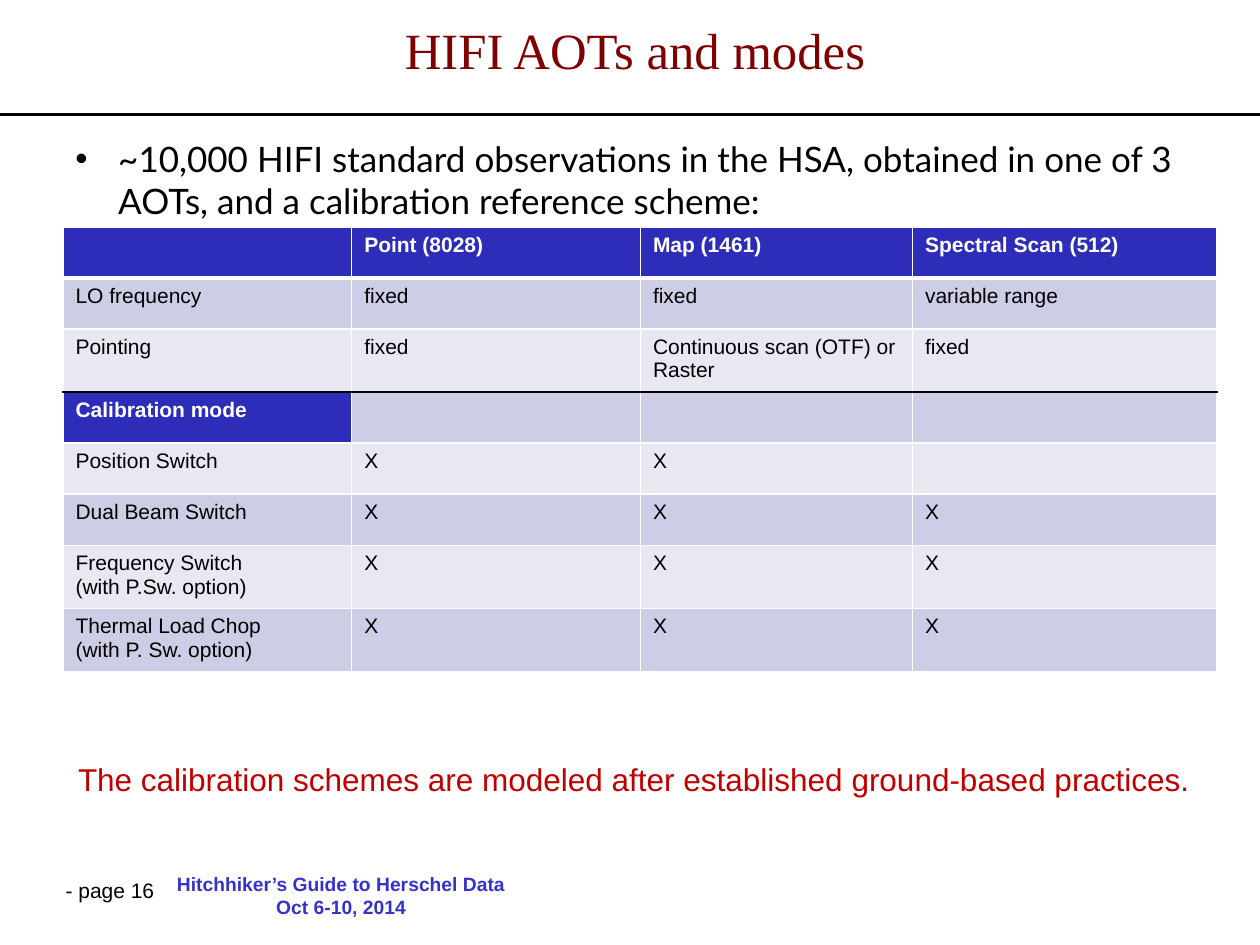
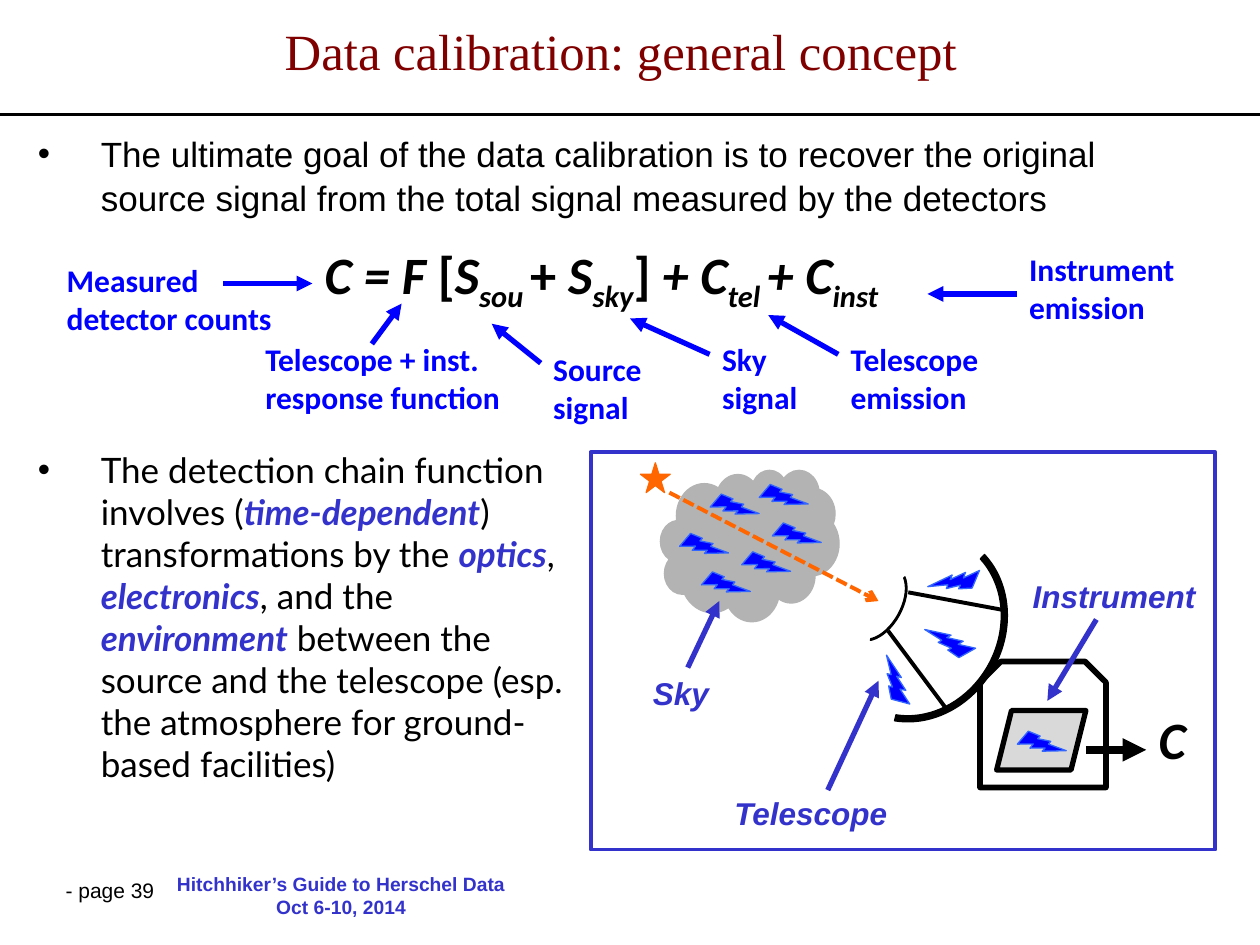
import pptx
import pptx.dml.color
import pptx.enum.dml
import pptx.enum.shapes
import pptx.enum.text
import pptx.oxml.ns
import pptx.util
from lxml import etree

Pt = pptx.util.Pt
SHAPE = pptx.enum.shapes.MSO_SHAPE
ALIGN = pptx.enum.text.PP_ALIGN
qn = pptx.oxml.ns.qn

COLORS = {
    "black": "000000", "white": "FFFFFF", "title": "800000", "accent": "3333CC",
    "header": "2D2DB9", "band_dark": "CDCDE6", "band_light": "E8E8F3",
    "note": "C00000", "label": "0000FF", "bolt_edge": "3366FF",
    "source": "FF6600", "cloud": "B3B3B3", "detector": "D9D9D9",
}
FOOTER = ["Hitchhiker’s Guide to Herschel Data", "Oct 6-10, 2014"]

# Observing modes
MODES_INTRO = ("~10,000 HIFI standard observations in the HSA, obtained in one of 3 AOTs, "
               "and a calibration reference scheme:")
MODES_NOTE = "The calibration schemes are modeled after established ground-based practices."
MODES = [
    ["", "Point (8028)", "Map (1461)", "Spectral Scan (512)"],
    ["LO frequency", "fixed", "fixed", "variable range"],
    ["Pointing", "fixed", "Continuous scan (OTF) or Raster", "fixed"],
    ["Calibration mode", "", "", ""],
    ["Position Switch", "X", "X", ""],
    ["Dual Beam Switch", "X", "X", "X"],
    ["Frequency Switch\n(with P.Sw. option)", "X", "X", "X"],
    ["Thermal Load Chop\n(with P. Sw. option)", "X", "X", "X"],
]
COLUMN_WIDTHS = [165, 165, 155.5, 174]
ROW_HEIGHT = 29.2
CALIBRATION_ROW = 3

# Calibration concept
GOAL = ("The ultimate goal of the data calibration is to recover the original source signal "
        "from the total signal measured by the detectors")
KEYWORD = {"color": "accent", "bold": True, "italic": True}
CHAIN = [
    ("The detection chain function involves (", {}), ("time-dependent", KEYWORD),
    (") transformations by the ", {}), ("optics", KEYWORD), (", ", {}),
    ("electronics", KEYWORD), (", and the ", {}), ("environment", KEYWORD),
    (" between the source and the telescope (esp. the atmosphere for ground-based facilities)", {}),
]
UPRIGHT = {"italic": False}
SUBSCRIPT = {"baseline": -25}
FORMULA = [
    ("C = F ", {}), ("[", UPRIGHT), ("S", {}), ("sou ", SUBSCRIPT), ("+ ", UPRIGHT),
    ("S", {}), ("sky", SUBSCRIPT), ("]", UPRIGHT), (" + C", {}), ("tel ", SUBSCRIPT),
    ("+ C", {}), ("inst", SUBSCRIPT),
]
# text, box, arrow start, arrow end
TERMS = [
    ("Measured detector counts", (31, 145.5, 140, 51), (127.5, 162), (178.5, 162)),
    ("Telescope + inst. response function", (144.5, 191, 153.5, 51), (212.5, 196.5), (229.5, 173.5)),
    ("Source signal", (309, 196.5, 79, 51), (309, 207.5), (281, 185)),
    ("Sky signal", (405.5, 191, 79, 51), (405.5, 202.5), (360, 182)),
    ("Telescope emission", (479, 191, 107, 51), (479, 202.5), (439, 180)),
    ("Instrument emission", (581, 139.5, 119, 51), (581, 168), (530, 168)),
]
PARTS = [
    ("Sky", (366, 381.5, 55, 29.5), (393, 381.5), (411, 343.5)),
    ("Telescope", (412.5, 450, 129, 29), (473, 451.5), (502, 389)),
    ("Instrument", (583, 326, 129, 29), (626.5, 354), (598.5, 400.5)),
]
SKY_BOLTS = [(390, 302.5), (435.5, 274.5), (443, 296.5), (425.5, 313), (407.5, 280), (402.5, 324.5)]
DETECTOR_BOLT = (583, 415.5)
DISH_BOLTS = [(533, 322, 131.4), (499, 380, 213.4), (530, 357, 169)]  # left, top, rotation
MIRRORS = [(467.5, 307.5, 113, 100), (479.5, 332, 45.5, 26.5)]
STRUTS = [((519, 338.5), (575.5, 349)), ((507.5, 360.5), (541.5, 406))]


def rgb(name):
    return pptx.dml.color.RGBColor.from_string(COLORS[name])


def points(values):
    return [Pt(value) for value in values]


def set_font(font, size, name, color, bold=False, italic=False):
    font.size, font.name = Pt(size), name
    font.color.rgb = rgb(color)
    font.bold, font.italic = bold, italic


def add_bullet(paragraph, indent):
    properties = paragraph._p.get_or_add_pPr()
    properties.set("marL", str(Pt(indent)))
    properties.set("indent", str(-Pt(indent)))
    etree.SubElement(properties, qn("a:buFont")).set("typeface", "Arial")
    etree.SubElement(properties, qn("a:buChar")).set("char", "•")


def add_text(slide, box, paragraphs, size, font, color="black", bold=False, italic=False,
             align=ALIGN.LEFT, bullet_indent=0):
    """Add a text box; each paragraph is a string or a list of (text, changes) runs."""
    frame = slide.shapes.add_textbox(*points(box)).text_frame
    frame.word_wrap = True
    for index, content in enumerate(paragraphs):
        paragraph = frame.add_paragraph() if index else frame.paragraphs[0]
        paragraph.alignment = align
        if bullet_indent:
            add_bullet(paragraph, bullet_indent)
        set_font(paragraph.font, size, font, color, bold, italic)
        for text, changes in [(content, {})] if isinstance(content, str) else content:
            run = paragraph.add_run()
            run.text = text
            if "color" in changes:
                run.font.color.rgb = rgb(changes["color"])
            if "bold" in changes:
                run.font.bold = changes["bold"]
            if "italic" in changes:
                run.font.italic = changes["italic"]
            if "baseline" in changes:
                run.font._element.set("baseline", str(changes["baseline"] * 1000))
    return frame


def add_line(slide, start, end, color, width, head=None, dash=None):
    connector = slide.shapes.add_connector(
        pptx.enum.shapes.MSO_CONNECTOR.STRAIGHT, *points(start + end))
    connector.line.color.rgb = rgb(color)
    connector.line.width = Pt(width)
    if dash:
        connector.line.dash_style = dash
    if head:
        etree.SubElement(connector.line._get_or_add_ln(), qn("a:tailEnd")).set("type", head)
    etree.SubElement(connector._element.spPr, qn("a:effectLst"))


def add_shape(slide, kind, box, fill, line, width=0.75, rotation=0, adjustments=()):
    shape = slide.shapes.add_shape(kind, *points(box))
    shape.shadow.inherit = False
    shape.rotation = rotation
    for index, value in enumerate(adjustments):
        shape.adjustments[index] = value
    if fill:
        shape.fill.solid()
        shape.fill.fore_color.rgb = rgb(fill)
    else:
        shape.fill.background()
    shape.line.color.rgb = rgb(line)
    shape.line.width = Pt(width)


def add_slide(presentation, title, title_box, page):
    """Add a title-only slide with the shared rule and footer."""
    slide = presentation.slides.add_slide(presentation.slide_layouts[5])
    placeholder = slide.shapes.title
    placeholder.left, placeholder.top, placeholder.width, placeholder.height = points(title_box)
    placeholder.text_frame.text = title
    set_font(placeholder.text_frame.paragraphs[0].font, 29, "Times New Roman", "title")
    add_line(slide, (0, 65.5), (720, 65.5), "black", 1.5)
    add_text(slide, (27, 498, 72, 25), [f"- page {page}"], 12, "Arial").margin_left = Pt(10.5)
    add_text(slide, (91, 495, 208, 36), FOOTER, 11, "Arial", "accent", bold=True, align=ALIGN.CENTER)
    return slide


def set_borders(cell, top, bottom):
    """Draw white sides, and top and bottom edges given as (color, width)."""
    side = ("white", 1)
    for tag, (color, width) in (("lnL", side), ("lnR", side), ("lnT", top), ("lnB", bottom)):
        line = etree.SubElement(cell._tc.get_or_add_tcPr(), qn(f"a:{tag}"), w=str(Pt(width)))
        fill = etree.SubElement(line, qn("a:solidFill"))
        etree.SubElement(fill, qn("a:srgbClr")).set("val", COLORS[color])


def add_modes_table(slide):
    box = (36, 129.6, sum(COLUMN_WIDTHS), ROW_HEIGHT * len(MODES))
    table = slide.shapes.add_table(len(MODES), len(COLUMN_WIDTHS), *points(box)).table
    for column, width in zip(table.columns, COLUMN_WIDTHS):
        column.width = Pt(width)
    edges = [("white", 1)] * (len(MODES) + 1)
    edges[1] = ("white", 3)
    edges[CALIBRATION_ROW] = ("black", 1)
    for row, texts in enumerate(MODES):
        table.rows[row].height = Pt(ROW_HEIGHT)
        for column, text in enumerate(texts):
            cell = table.cell(row, column)
            heading = row == 0 or (row, column) == (CALIBRATION_ROW, 0)
            cell.text = text
            for paragraph in cell.text_frame.paragraphs:
                set_font(paragraph.font, 12, "Arial", "white" if heading else "black", heading)
            set_borders(cell, edges[row], edges[row + 1])
            cell.fill.solid()
            band = "band_dark" if row % 2 else "band_light"
            cell.fill.fore_color.rgb = rgb("header" if heading else band)


def build_modes(presentation):
    slide = add_slide(presentation, "HIFI AOTs and modes", (168, 0, 390, 56), 16)
    add_text(slide, (36, 75, 648, 411), [MODES_INTRO], 20, "Lato", bullet_indent=24.5)
    add_modes_table(slide)
    add_text(slide, (37.5, 431, 661, 29), [MODES_NOTE], 18, "Arial", "note")


def add_labels(slide, labels, font, color, italic):
    for text, box, start, end in labels:
        add_text(slide, box, [text], 18, font, color, bold=True, italic=italic)
        add_line(slide, start, end, color, 3, "triangle")


def add_bolt(slide, left, top, size=(23, 20), rotation=332.1):
    add_shape(slide, SHAPE.LIGHTNING_BOLT, (left, top, *size), "label", "bolt_edge", rotation=rotation)


def add_detection_chain(slide):
    add_shape(slide, SHAPE.RECTANGLE, (337.5, 258.5, 357, 227), None, "accent", 2.25)
    add_shape(slide, SHAPE.STAR_5_POINT, (366, 264.5, 17, 17), "source", "source")
    add_shape(slide, SHAPE.CLOUD_CALLOUT, (377.5, 268.5, 102, 86.5), "cloud", "cloud",
              adjustments=(-0.14, 0.16))
    for left, top in SKY_BOLTS:
        add_bolt(slide, left, top)
    for box in MIRRORS:
        add_shape(slide, SHAPE.BLOCK_ARC, box, "black", "black", rotation=119.2,
                  adjustments=(116.57, 206.46, 0.035))
    for start, end in STRUTS:
        add_line(slide, start, end, "black", 2.25)
    add_line(slide, (382.5, 281.5), (502, 343.5), "source", 2.25, "arrow",
             pptx.enum.dml.MSO_LINE.SQUARE_DOT)
    for left, top, rotation in DISH_BOLTS:
        add_bolt(slide, left, top, (26.5, 19.5), rotation)
    add_shape(slide, SHAPE.SNIP_2_SAME_RECTANGLE, (560, 378, 72, 72), None, "black", 3.25)
    add_shape(slide, SHAPE.PARALLELOGRAM, (569.5, 406, 51, 34), "detector", "black", 3)
    add_bolt(slide, *DETECTOR_BOLT)
    add_labels(slide, PARTS, "Arial", "accent", italic=True)
    add_line(slide, (620.5, 428.5), (655, 428.5), "black", 4.5, "triangle")
    add_text(slide, (655, 400.5, 44, 45), ["C"], 30, "Calibri", bold=True, italic=True)


def build_calibration(presentation):
    slide = add_slide(presentation, "Data calibration: general concept", (60, 3.5, 590, 51), 39)
    goal = add_text(slide, (14.5, 71.5, 669, 79), [GOAL], 20, "Arial", bullet_indent=36)
    goal.paragraphs[0].line_spacing = 1.04
    add_text(slide, (178.5, 134.5, 363, 73), [FORMULA], 30, "Calibri", bold=True, italic=True)
    add_labels(slide, TERMS, "Calibri", "label", italic=False)
    add_text(slide, (14.5, 252.5, 323.5, 232.5), [CHAIN], 20, "Lato", bullet_indent=36)
    add_detection_chain(slide)


def main():
    presentation = pptx.Presentation()
    presentation.slide_width, presentation.slide_height = Pt(720), Pt(540)
    build_modes(presentation)
    build_calibration(presentation)
    presentation.save("out.pptx")


if __name__ == "__main__":
    main()
